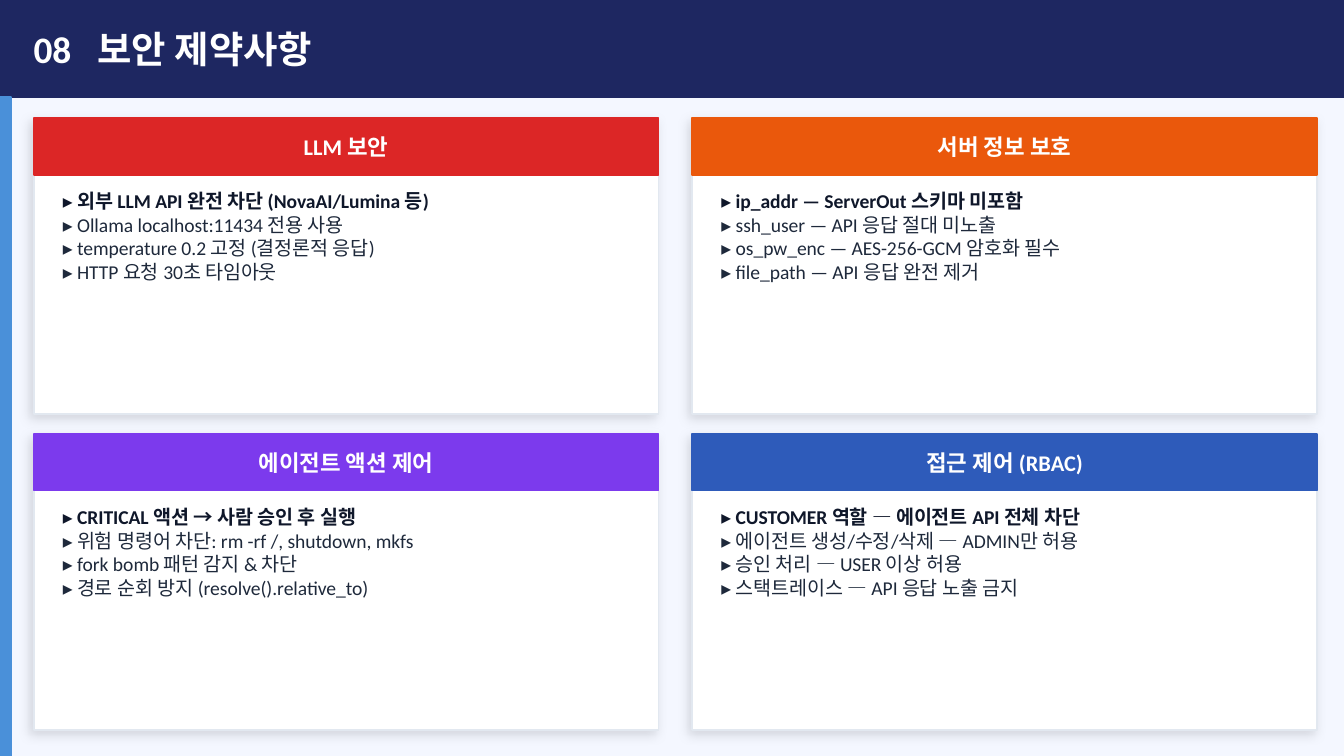
from lxml.etree import SubElement
from pptx import Presentation
from pptx.dml.color import RGBColor
from pptx.enum.shapes import MSO_SHAPE as Shape
from pptx.enum.text import MSO_ANCHOR as Anchor, PP_ALIGN as Align
from pptx.oxml.ns import qn
from pptx.util import Pt

PX = 4572
POINT = 12700
DEGREE = 60000

NAVY = RGBColor(0x1E, 0x27, 0x61)
SKY = RGBColor(0x4A, 0x90, 0xD9)
PALE = RGBColor(0xF4, 0xF7, 0xFF)
WHITE = RGBColor(0xFF, 0xFF, 0xFF)
BORDER = RGBColor(0xE2, 0xE8, 0xF0)
INK = RGBColor(0x0F, 0x17, 0x2A)
SLATE = RGBColor(0x1E, 0x29, 0x3B)
RED = RGBColor(0xDC, 0x26, 0x26)
ORANGE = RGBColor(0xEA, 0x58, 0x0C)
VIOLET = RGBColor(0x7C, 0x3A, 0xED)
BLUE = RGBColor(0x2E, 0x5B, 0xBA)

TITLE = {"name": "Calibri", "size": Pt(20), "bold": True}
HEADING = {"name": "Calibri", "size": Pt(12), "bold": True}
KEY_RULE = {"name": "Calibri", "size": Pt(10.5), "bold": True}
RULE = {"name": "Calibri", "size": Pt(10.5), "bold": False}
CENTERED_FRAME = {
    "margin_left": 0, "margin_top": 0, "margin_right": 0, "margin_bottom": 0,
    "vertical_anchor": Anchor.MIDDLE, "word_wrap": True,
}
RULES_FRAME = {"word_wrap": True}

SLIDE_WIDTH, SLIDE_HEIGHT = 2000, 1125
LEFT, TOP = 50, 176
CARD_WIDTH, CARD_HEIGHT = 930, 440
COLUMN_GAP, ROW_GAP = 50, 30
HEADING_HEIGHT = 84
TITLE_HEIGHT = 144
TITLE_TAB = 95

CARDS = [
    ("LLM 보안", RED, [
        "외부 LLM API 완전 차단 (NovaAI/Lumina 등)",
        "Ollama localhost:11434 전용 사용",
        "temperature 0.2 고정 (결정론적 응답)",
        "HTTP 요청 30초 타임아웃",
    ]),
    ("서버 정보 보호", ORANGE, [
        "ip_addr — ServerOut 스키마 미포함",
        "ssh_user — API 응답 절대 미노출",
        "os_pw_enc — AES-256-GCM 암호화 필수",
        "file_path — API 응답 완전 제거",
    ]),
    ("에이전트 액션 제어", VIOLET, [
        "CRITICAL 액션 → 사람 승인 후 실행",
        "위험 명령어 차단: rm -rf /, shutdown, mkfs",
        "fork bomb 패턴 감지 & 차단",
        "경로 순회 방지 (resolve().relative_to)",
    ]),
    ("접근 제어 (RBAC)", BLUE, [
        "CUSTOMER 역할 — 에이전트 API 전체 차단",
        "에이전트 생성/수정/삭제 — ADMIN만 허용",
        "승인 처리 — USER 이상 허용",
        "스택트레이스 — API 응답 노출 금지",
    ]),
]


def px(*lengths):
    return [length * PX for length in lengths]


def apply(target, values):
    for attribute, value in values.items():
        setattr(target, attribute, value)


def add_panel(slide, box, fill, border):
    panel = slide.shapes.add_shape(Shape.RECTANGLE, *px(*box))
    panel.shadow.inherit = False
    panel.fill.solid()
    panel.fill.fore_color.rgb = fill
    panel.line.color.rgb = border
    panel.line.width = Pt(1)
    return panel


def add_soft_shadow(panel):
    effects = panel._element.spPr.find(qn("a:effectLst"))
    shadow = SubElement(effects, qn("a:outerShdw"), {
        "blurRad": str(6 * POINT), "dist": str(3 * POINT),
        "dir": str(135 * DEGREE), "algn": "bl", "rotWithShape": "0",
    })
    tint = SubElement(shadow, qn("a:srgbClr"), val="000000")
    SubElement(tint, qn("a:alpha"), val="12000")


def add_frame(slide, box, settings):
    frame = slide.shapes.add_textbox(*px(*box)).text_frame
    apply(frame, settings)
    return frame


def write(paragraph, words, style, color):
    run = paragraph.add_run()
    run.text = words
    apply(run.font, style)
    run.font.color.rgb = color


def add_title(slide, number, words):
    add_panel(slide, (0, 0, SLIDE_WIDTH, TITLE_HEIGHT), NAVY, NAVY)
    add_panel(slide, (0, TITLE_HEIGHT, 16, SLIDE_HEIGHT - TITLE_HEIGHT), SKY, SKY)
    title = add_frame(slide, (LEFT, 0, 1900, TITLE_HEIGHT), CENTERED_FRAME).paragraphs[0]
    tabs = SubElement(title._p.get_or_add_pPr(), qn("a:tabLst"))
    SubElement(tabs, qn("a:tab"), pos=str(TITLE_TAB * PX), algn="l")
    write(title, f"{number}\t{words}", TITLE, WHITE)


def add_card(slide, left, top, heading, accent, rules):
    heading_box = (left, top, CARD_WIDTH, HEADING_HEIGHT)
    add_soft_shadow(add_panel(slide, (left, top, CARD_WIDTH, CARD_HEIGHT), WHITE, BORDER))
    add_panel(slide, heading_box, accent, accent)
    label = add_frame(slide, heading_box, CENTERED_FRAME).paragraphs[0]
    label.alignment = Align.CENTER
    write(label, heading, HEADING, WHITE)

    frame = add_frame(slide, (left + 24, top + 96, 880, 330), RULES_FRAME)
    for index, rule in enumerate(rules):
        line = frame.add_paragraph() if index else frame.paragraphs[0]
        style, color = (RULE, SLATE) if index else (KEY_RULE, INK)
        write(line, f"▸ {rule}", style, color)


def main():
    deck = Presentation()
    deck.slide_width, deck.slide_height = px(SLIDE_WIDTH, SLIDE_HEIGHT)
    slide = deck.slides.add_slide(deck.slide_layouts[6])
    slide.background.fill.solid()
    slide.background.fill.fore_color.rgb = PALE
    add_title(slide, "08", "보안 제약사항")
    for index, (heading, accent, rules) in enumerate(CARDS):
        row, column = divmod(index, 2)
        left = LEFT + column * (CARD_WIDTH + COLUMN_GAP)
        top = TOP + row * (CARD_HEIGHT + ROW_GAP)
        add_card(slide, left, top, heading, accent, rules)
    deck.save("out.pptx")


if __name__ == "__main__":
    main()
